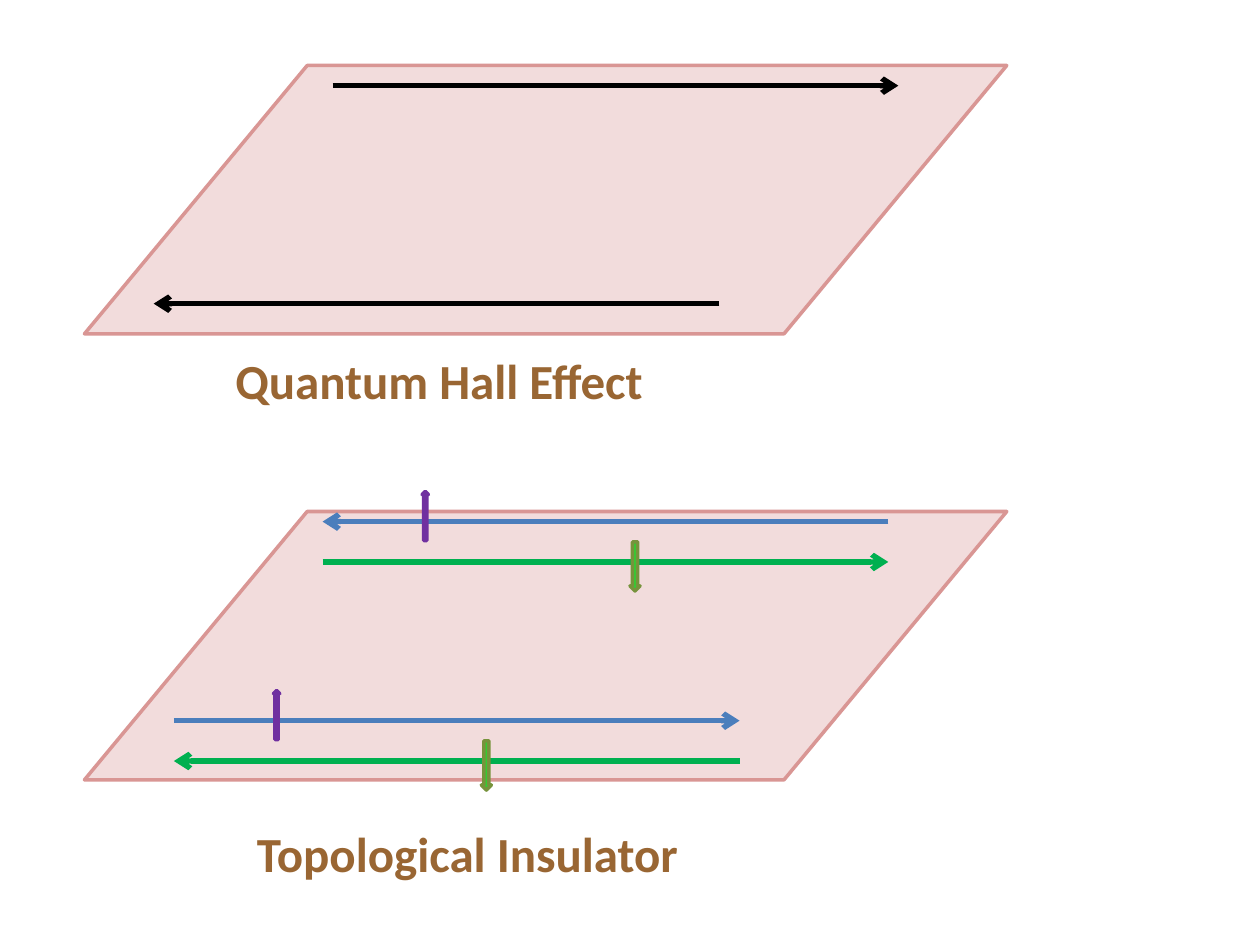
from dataclasses import dataclass

from lxml.etree import SubElement
from pptx import Presentation
from pptx.dml.color import RGBColor
from pptx.enum.shapes import MSO_CONNECTOR, MSO_SHAPE
from pptx.enum.text import MSO_AUTO_SIZE
from pptx.oxml.ns import qn
from pptx.util import Inches, Pt

CHANNEL_LENGTH = 4.49
SPIN_HEIGHT = 0.39
CAPTION_FONT = {"name": "Calibri", "size": Pt(28), "bold": True}
CAPTION_FRAME = {"word_wrap": False, "auto_size": MSO_AUTO_SIZE.SHAPE_TO_FIT_TEXT}


@dataclass(frozen=True)
class Spin:
    preset: MSO_SHAPE
    along: float  # distance from the left end of its channel
    above: float  # distance of its top above the channel
    width: float
    fill: str
    outline: str


@dataclass(frozen=True)
class Channel:
    left: float
    y: float
    rightward: bool
    hue: str
    spin: Spin | None = None


@dataclass(frozen=True)
class Caption:
    text: str
    left: float
    top: float
    width: float


SPIN_UP = Spin(MSO_SHAPE.UP_ARROW, 0.79, 0.24, 0.05, "4F81BD", "7030A0")
SPIN_DOWN = Spin(MSO_SHAPE.DOWN_ARROW, 2.44, 0.16, 0.08, "33CC33", "77933C")


def paint(color_format, hex_value: str) -> None:
    color_format.rgb = RGBColor.from_string(hex_value)


def add_filled(slide, preset, box: tuple, fill: str, outline: str):
    shape = slide.shapes.add_shape(preset, *map(Inches, box))
    shape.shadow.inherit = False
    shape.fill.solid()
    paint(shape.fill.fore_color, fill)
    paint(shape.line.color, outline)
    shape.line.width = Pt(2)
    return shape


def add_sheet(slide, top: float) -> None:
    sheet = add_filled(slide, MSO_SHAPE.PARALLELOGRAM, (0.67, top, 7.32, 2.13),
                       "E6B9B8", "D99694")
    sheet.adjustments[0] = 0.83
    fill_color = sheet.fill._xPr.find(qn("a:solidFill"))[0]
    SubElement(fill_color, qn("a:alpha"), val="49000")


def add_channel(slide, channel: Channel) -> None:
    ends = [channel.left, channel.left + CHANNEL_LENGTH]
    start, end = ends if channel.rightward else reversed(ends)
    y = Inches(channel.y)
    arrow = slide.shapes.add_connector(MSO_CONNECTOR.STRAIGHT, Inches(start), y,
                                       Inches(end), y)
    paint(arrow.line.color, channel.hue)
    arrow.line.width = Pt(3)
    SubElement(arrow.line._get_or_add_ln(), qn("a:tailEnd"), type="arrow")
    SubElement(arrow._element.spPr, qn("a:effectLst"))

    spin = channel.spin
    if spin:
        box = (channel.left + spin.along, channel.y - spin.above, spin.width, SPIN_HEIGHT)
        add_filled(slide, spin.preset, box, spin.fill, spin.outline)


def add_caption(slide, caption: Caption) -> None:
    box = (caption.left, caption.top, caption.width, 0.57)
    frame = slide.shapes.add_textbox(*map(Inches, box)).text_frame
    for name, value in CAPTION_FRAME.items():
        setattr(frame, name, value)
    run = frame.paragraphs[0].add_run()
    run.text = caption.text
    for name, value in CAPTION_FONT.items():
        setattr(run.font, name, value)
    paint(run.font.color, "996633")


def main() -> None:
    presentation = Presentation()
    presentation.slide_width, presentation.slide_height = Inches(10), Inches(7.5)
    slide = presentation.slides.add_slide(presentation.slide_layouts[6])

    # Quantum Hall sheet: one channel on each edge
    add_sheet(slide, 0.52)
    add_channel(slide, Channel(2.64, 0.68, True, "000000"))
    add_channel(slide, Channel(1.22, 2.41, False, "000000"))

    # Topological insulator: opposite spins run opposite ways on each edge
    add_sheet(slide, 4.06)
    for left, y, up_rightward in ((1.38, 5.72, True), (2.56, 4.14, False)):
        add_channel(slide, Channel(left, y, up_rightward, "4B7EBC", SPIN_UP))
        add_channel(slide, Channel(left, y + 0.32, not up_rightward, "00B050", SPIN_DOWN))

    # Captions
    add_caption(slide, Caption("Quantum Hall Effect", 1.77, 2.73, 3.49))
    add_caption(slide, Caption("Topological Insulator", 1.94, 6.49, 3.58))

    presentation.save("out.pptx")


if __name__ == "__main__":
    main()
